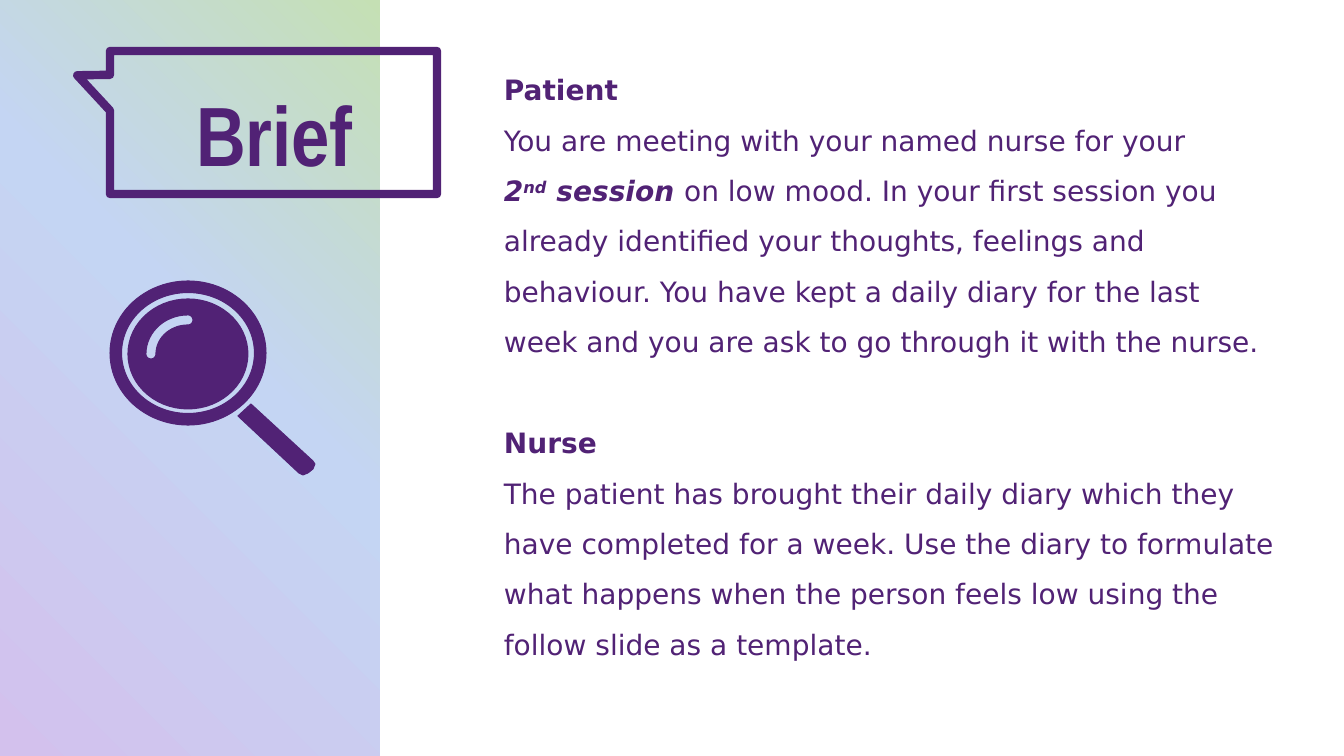
"""Build the briefing slide for the patient and the nurse."""
from math import cos, radians, sin

from lxml.etree import SubElement
from pptx import Presentation
from pptx.dml.color import RGBColor
from pptx.enum.shapes import MSO_SHAPE
from pptx.enum.text import MSO_ANCHOR, MSO_AUTO_SIZE, PP_ALIGN
from pptx.oxml.ns import qn
from pptx.util import Emu, Pt

PURPLE = RGBColor(0x51, 0x22, 0x75)
LILAC = RGBColor(0xD3, 0xC1, 0xED)
SKY = RGBColor(0xC4, 0xD5, 0xF3)
LEAF = RGBColor(0xC5, 0xE0, 0xB4)

TITLE = "Brief"
BRIEFS = [
    ((494, 51, 794, 316), [
        [("Patient", "b")],
        [("You are meeting with your named nurse for your", "")],
        [("2", "bi"), ("nd", "bi^"), (" session ", "bi"),
         ("on low mood. In your first session you already identified your "
          "thoughts, feelings and behaviour. You have kept a daily diary for "
          "the last week and you are ask to go through it with the nurse.", "")],
    ]),
    ((494, 404, 794, 265), [
        [("Nurse", "b")],
        [("The patient has brought their daily diary which they have completed "
          "for a week. Use the diary to formulate what happens when the person "
          "feels low using the follow slide as a template.", "")],
    ]),
]
STOPS = [(0, LILAC), (56, SKY), (100, LEAF)]
LENS = (188, 354)
HANDLE = [(251, 404), (238, 416), (299, 473), (303, 475), (308, 473),
          (313, 469), (315, 464), (313, 461)]


def px(n):
    return Emu(round(n * 914400 / 100.8))


def arc(center, rx, ry, start, end, step=6):
    turn = step if end > start else -step
    return [(center[0] + rx * cos(radians(a)), center[1] + ry * sin(radians(a)))
            for a in range(start, end + turn, turn)]


def add_preset(s, kind, box):
    sp = s.shapes.add_shape(kind, *map(px, box))
    sp.shadow.inherit = False
    return sp


def paint(sp):
    sp.fill.solid()
    sp.fill.fore_color.rgb = sp.line.color.rgb = PURPLE
    sp.line.width = Pt(0.75)


def add_outline(s, contours):
    first, *rest = [[(px(x), px(y)) for x, y in c] for c in contours]
    fb = s.shapes.build_freeform(*first[0])
    fb.add_line_segments(first[1:])
    for points in rest:
        fb.move_to(*points[0])
        fb.add_line_segments(points[1:])
    sp = fb.convert_to_shape()
    sp.shadow.inherit = False
    paint(sp)


def add_panel(s):
    sp = add_preset(s, MSO_SHAPE.RECTANGLE, (0, 0, 380, 756))
    sp.line.fill.background()
    sp.fill.gradient()
    grad = sp.element.spPr.find(qn("a:gradFill"))
    for child in list(grad):
        grad.remove(child)
    stops = SubElement(grad, qn("a:gsLst"))
    for pos, color in STOPS:
        gs = SubElement(stops, qn("a:gs"), pos=str(pos * 1000))
        SubElement(gs, qn("a:srgbClr"), val=str(color))
    circle = SubElement(grad, qn("a:path"), {"path": "circle"})
    SubElement(circle, qn("a:fillToRect"), t="100000", r="100000")


def add_title(s):
    sp = add_preset(s, MSO_SHAPE.RECTANGULAR_CALLOUT, (110, 51, 327, 143))
    sp.adjustments[0], sp.adjustments[1] = -0.6, -0.33
    sp.fill.background()
    sp.line.color.rgb = PURPLE
    sp.line.width = Pt(6)
    title = s.shapes.title
    title.left, title.top, title.width, title.height = map(px, (167, 57, 218, 132))
    s.shapes.element.append(title.element)
    tf = title.text_frame
    tf.text = TITLE
    tf.auto_size = MSO_AUTO_SIZE.NONE
    tf.vertical_anchor = MSO_ANCHOR.TOP
    tf.margin_left = px(29)
    p = tf.paragraphs[0]
    p.alignment = PP_ALIGN.LEFT
    p.line_spacing = 1.2
    p.space_before = Pt(0)
    p.font.name, p.font.size, p.font.bold = "Arial Narrow", Pt(60), True
    p.font.color.rgb = PURPLE


def add_magnifier(s):
    ring = add_preset(s, MSO_SHAPE.DONUT, (110, 281, 156, 144))
    ring.adjustments[0] = 0.08
    paint(ring)
    cx, cy = LENS
    glint = (arc(LENS, 42, 39, 180, 270) + arc((cx, cy - 34), 5, 5, -90, 90)
             + arc(LENS, 32, 29, 270, 180) + arc((cx - 37, cy), 5, 5, 0, 180))
    add_outline(s, [arc(LENS, 60, 55, 0, 360), glint])
    add_outline(s, [HANDLE])


def add_brief(s, box, paragraphs):
    tf = s.shapes.add_textbox(*map(px, box)).text_frame
    tf.word_wrap = True
    for i, runs in enumerate(paragraphs):
        p = tf.add_paragraph() if i else tf.paragraphs[0]
        p.line_spacing = 1.5
        p.font.name, p.font.size = "DejaVu Sans", Pt(20)
        p.font.color.rgb = PURPLE
        for text, style in runs:
            r = p.add_run()
            r.text = text
            r.font.bold, r.font.italic = "b" in style, "i" in style
            if "^" in style:
                r.font._element.set("baseline", "30000")


def main():
    prs = Presentation()
    prs.slide_width, prs.slide_height = px(1344), px(756)
    s = prs.slides.add_slide(prs.slide_layouts[5])
    add_panel(s)
    add_title(s)
    add_magnifier(s)
    for box, paragraphs in BRIEFS:
        add_brief(s, box, paragraphs)
    prs.save("out.pptx")


if __name__ == "__main__":
    main()
